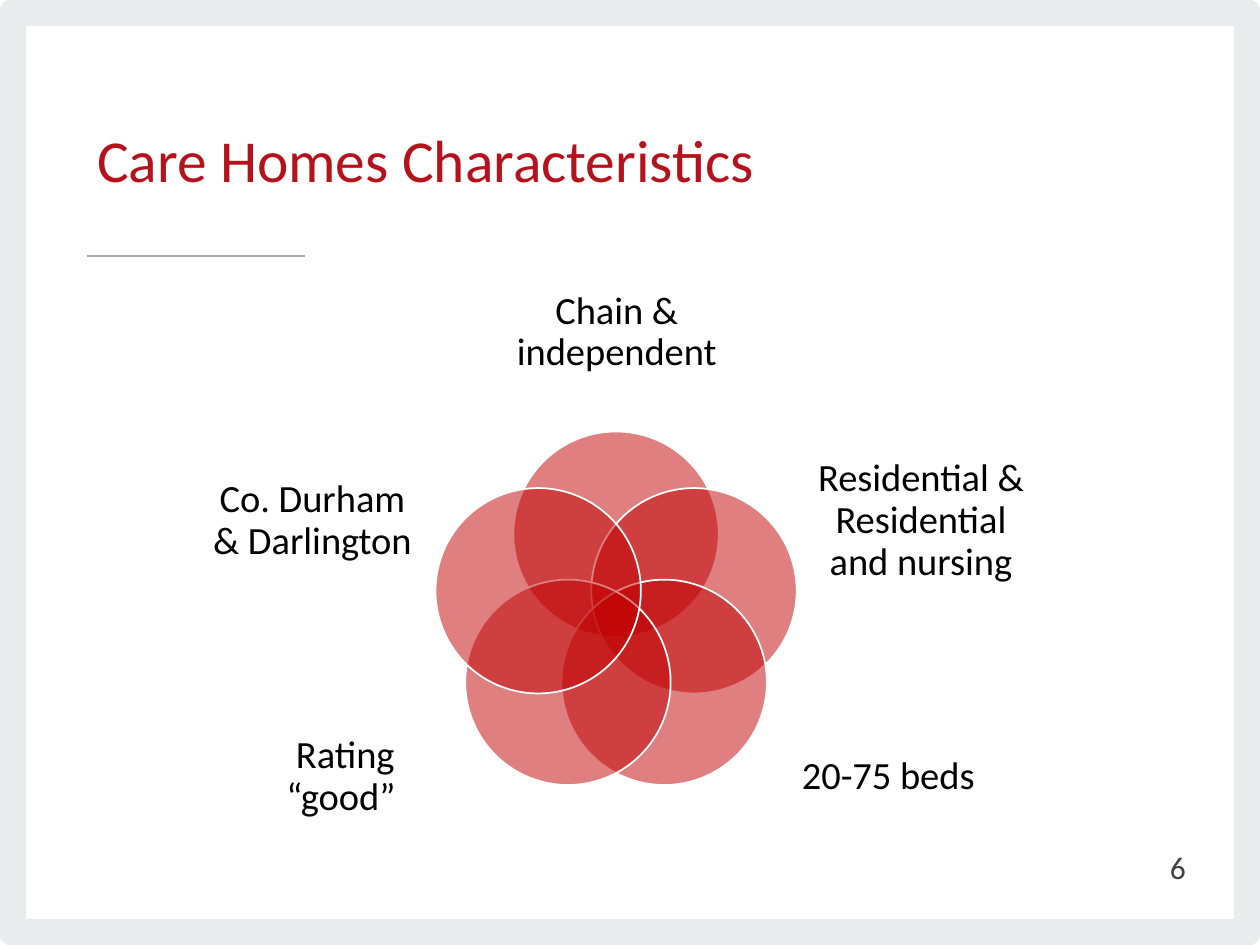
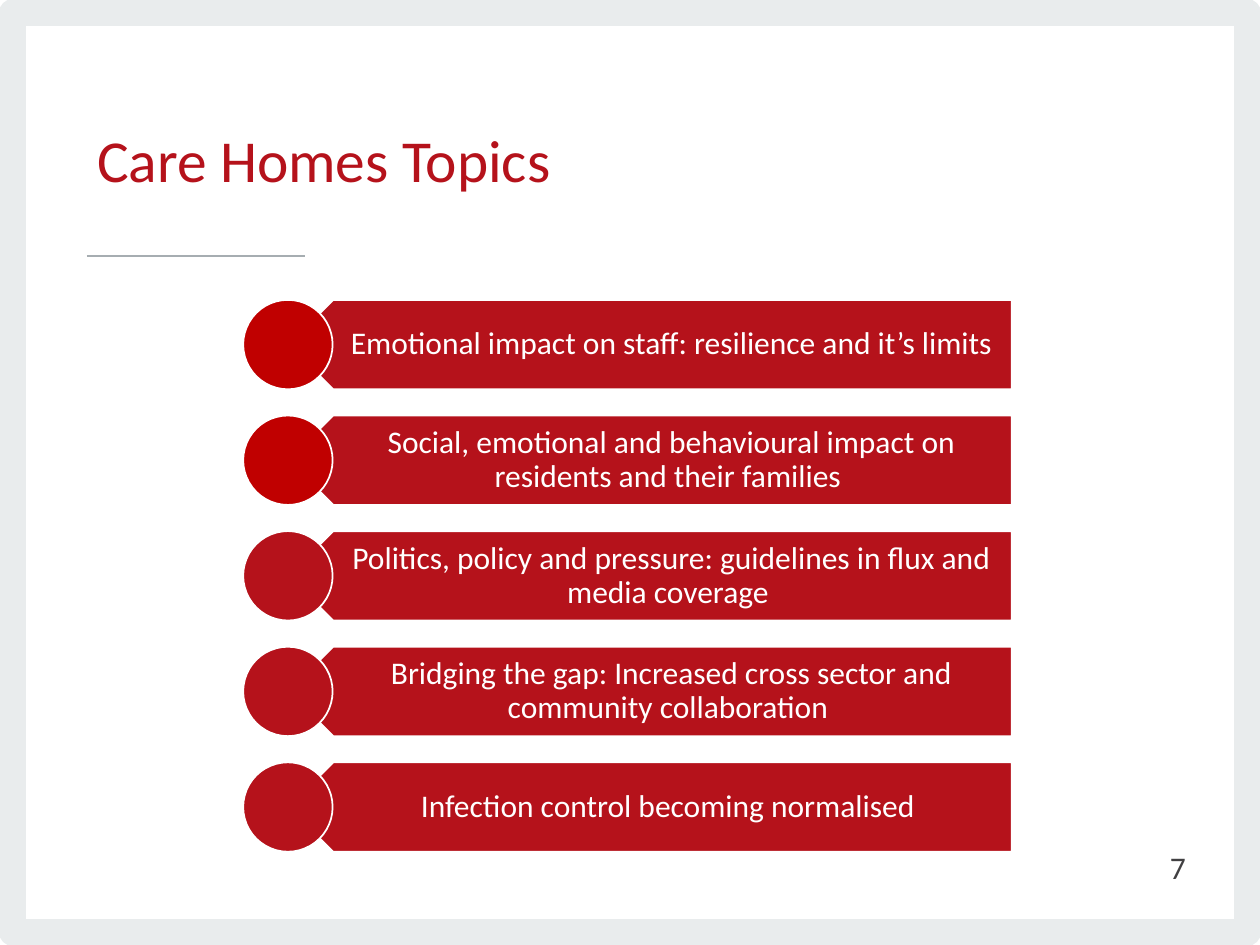
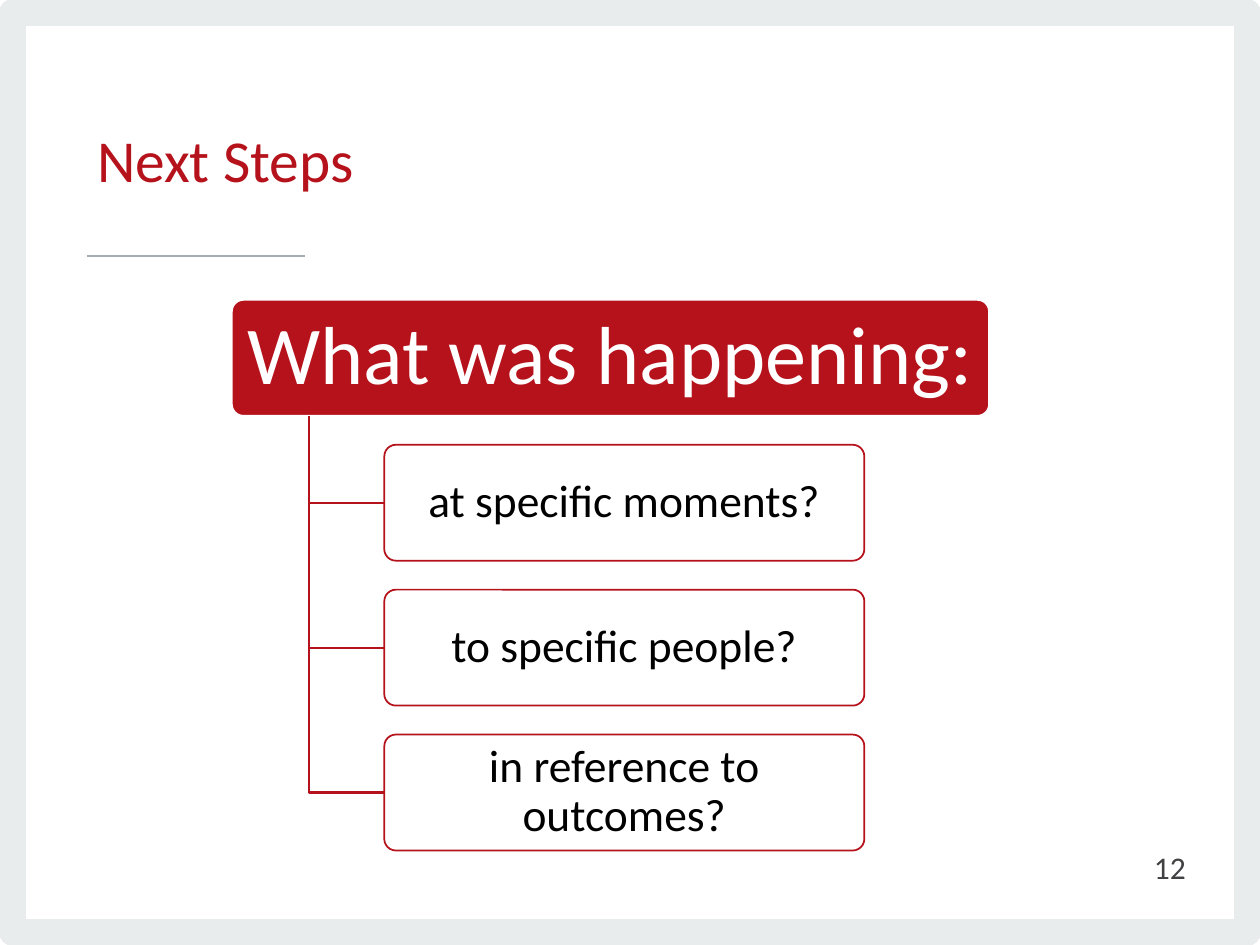
from math import cos, pi, sin

from lxml.etree import SubElement
from pptx import Presentation
from pptx.dml.color import RGBColor
from pptx.enum.shapes import MSO_CONNECTOR, MSO_SHAPE
from pptx.enum.text import MSO_ANCHOR, MSO_AUTO_SIZE, PP_ALIGN
from pptx.oxml.ns import qn
from pptx.util import Inches, Pt

FONT = "Calibri"
CRIMSON = RGBColor(0xB5, 0x12, 0x1B)
RED = RGBColor(0xC0, 0x00, 0x00)
WHITE = RGBColor(0xFF, 0xFF, 0xFF)
BLACK = RGBColor(0x00, 0x00, 0x00)
FRAME_GREY = RGBColor(0xE9, 0xEC, 0xED)
RULE_GREY = RGBColor(0xA6, 0xAD, 0xB1)
NUMBER_GREY = RGBColor(0x41, 0x40, 0x42)

CHARACTERISTICS = [
    ("Chain & independent", (3.95, 2.09, 1.89, 1.1)),
    ("Residential & Residential and nursing", (6.46, 3.54, 1.7, 1.19)),
    ("20-75 beds", (6.2, 5.57, 1.7, 1.19)),
    ("Rating “good” ", (1.89, 5.57, 1.7, 1.19)),
    ("Co. Durham & Darlington", (1.63, 3.54, 1.7, 1.19)),
]
TOPICS = [
    ("Emotional impact on staff: resilience and it’s limits ", RED),
    ("Social, emotional and behavioural impact on residents and their families ", RED),
    ("Politics, policy and pressure: guidelines in flux and media coverage ", CRIMSON),
    ("Bridging the gap: Increased cross sector and community collaboration ", CRIMSON),
    ("Infection control becoming normalised ", CRIMSON),
]
QUESTION = "What was happening: "
QUESTION_ENDINGS = [
    "at specific moments?",
    "to specific people?",
    "in reference to outcomes?",
]


def write_text(shape, text, size, color, align=PP_ALIGN.CENTER, spacing=0.9,
               insets=(0, 0, 0, 0)):
    frame = shape.text_frame
    frame.word_wrap = True
    frame.auto_size = MSO_AUTO_SIZE.NONE
    frame.vertical_anchor = MSO_ANCHOR.MIDDLE
    frame.margin_left, frame.margin_top, frame.margin_right, frame.margin_bottom = map(Inches, insets)
    para = frame.paragraphs[0]
    para.alignment = align
    para.line_spacing = spacing
    span = para.add_run()
    span.text = text
    span.font.name = FONT
    span.font.size = Pt(size)
    span.font.color.rgb = color


def add_label(page, place, text, size, color, **style):
    box = page.shapes.add_textbox(*map(Inches, place))
    write_text(box, text, size, color, **style)


def add_figure(page, kind, place, fill=None, line=WHITE, width=1, opacity=100):
    shape = page.shapes.add_shape(kind, *map(Inches, place))
    shape.shadow.inherit = False
    shape.line.color.rgb = line
    shape.line.width = Pt(width)
    if fill is None:
        shape.fill.background()
        return shape
    shape.fill.solid()
    shape.fill.fore_color.rgb = fill
    if opacity < 100:
        color = shape.fill._xPr.find(qn("a:solidFill"))[0]
        SubElement(color, qn("a:alpha")).set("val", str(opacity * 1000))
    return shape


def add_page(deck, title, number):
    page = deck.slides.add_slide(deck.slide_layouts[5])
    border = add_figure(page, MSO_SHAPE.RECTANGLE, (0.1, 0.1, 9.8, 7.3), line=FRAME_GREY, width=15.11)
    SubElement(border.line._get_or_add_ln(), qn("a:round"))
    rule = page.shapes.add_connector(
        MSO_CONNECTOR.STRAIGHT, Inches(0.69), Inches(2.03), Inches(2.42), Inches(2.03))
    rule.line.color.rgb = RULE_GREY
    rule.line.width = Pt(1.33)
    SubElement(rule._element.spPr, qn("a:effectLst"))
    heading = page.shapes.title
    heading.left, heading.top, heading.width, heading.height = map(Inches, (0.67, 0.73, 5.84, 1.12))
    write_text(heading, title, 34, CRIMSON, align=PP_ALIGN.LEFT, spacing=Pt(36),
               insets=(0.1, 0.05, 0.1, 0.05))
    add_label(page, (6.51, 6.68, 3, 0.4), number, 18, NUMBER_GREY, align=PP_ALIGN.RIGHT,
              spacing=1.0, insets=(0.1, 0.05, 0.1, 0.05))
    return page


def build_characteristics(deck):
    page = add_page(deck, "Care Homes Characteristics", "6")
    center_x, center_y, orbit, diameter = 4.89, 4.89, 0.65, 1.63
    for index, (text, place) in enumerate(CHARACTERISTICS):
        angle = 2 * pi * index / len(CHARACTERISTICS)
        left = center_x + orbit * sin(angle) - diameter / 2
        top = center_y - orbit * cos(angle) - diameter / 2
        add_figure(page, MSO_SHAPE.OVAL, (left, top, diameter, diameter), RED, opacity=50)
        add_label(page, place, text, 22, BLACK)


def build_topics(deck):
    page = add_page(deck, "Care Homes Topics", "7")
    first_top, last_top, height = 2.38, 6.05, 0.71
    pitch = (last_top - first_top) / (len(TOPICS) - 1)
    for index, (text, dot_color) in enumerate(TOPICS):
        top = first_top + index * pitch
        bar = add_figure(page, MSO_SHAPE.PENTAGON, (2.29, top, 5.74, height), CRIMSON)
        bar.rotation = 180
        add_label(page, (2.46, top, 5.56, height), text, 18, WHITE,
                  insets=(0.31, 0.07, 0.13, 0.07))
        add_figure(page, MSO_SHAPE.OVAL, (1.93, top, height, height), dot_color)


def build_next_steps(deck):
    page = add_page(deck, "Next Steps", "12")
    top, height, pitch, trunk, left = 2.38, 0.92, 1.15, 2.45, 3.05
    header = add_figure(page, MSO_SHAPE.ROUNDED_RECTANGLE, (1.84, top, 6.01, height), CRIMSON)
    header.adjustments[0] = 0.1
    write_text(header, QUESTION, 47, WHITE, insets=(0.03, 0.07, 0.03, 0.07))
    for index, text in enumerate(QUESTION_ENDINGS, start=1):
        box_top = top + index * pitch
        middle = box_top + height / 2
        builder = page.shapes.build_freeform(Inches(trunk), Inches(top + height))
        builder.add_line_segments(
            [(Inches(trunk), Inches(middle)), (Inches(left), Inches(middle))], close=False)
        branch = builder.convert_to_shape()
        branch.shadow.inherit = False
        branch.fill.background()
        branch.line.color.rgb = CRIMSON
        branch.line.width = Pt(1.25)
        box = add_figure(page, MSO_SHAPE.ROUNDED_RECTANGLE, (left, box_top, 3.81, height),
                         WHITE, line=CRIMSON, opacity=90)
        box.adjustments[0] = 0.1
        write_text(box, text, 26, BLACK, insets=(0.05, 0.04, 0.05, 0.04))


def main():
    deck = Presentation()
    deck.slide_width, deck.slide_height = Inches(10), Inches(7.5)
    build_characteristics(deck)
    build_topics(deck)
    build_next_steps(deck)
    deck.save("out.pptx")


if __name__ == "__main__":
    main()
